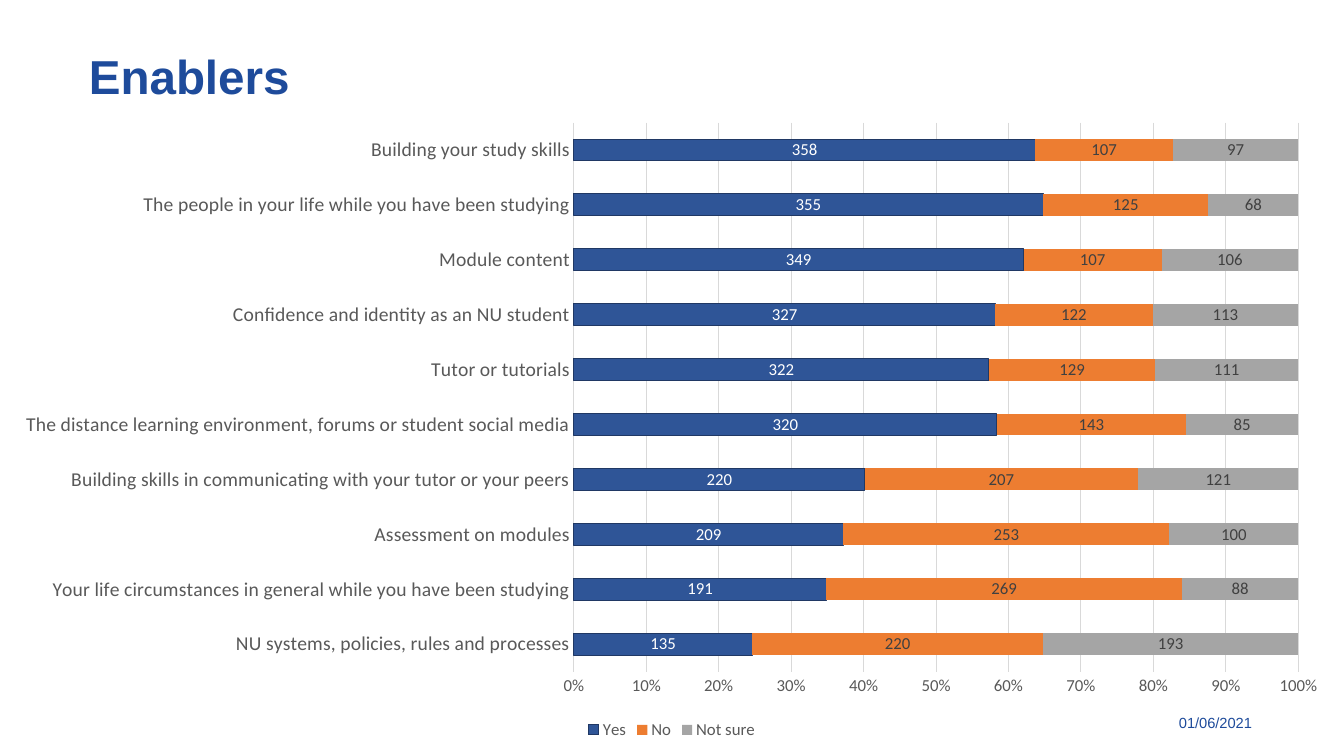
import pptx
import pptx.chart.data
import pptx.dml.color
import pptx.enum.chart
import pptx.enum.text
import pptx.oxml
import pptx.util

Pt = pptx.util.Pt
ALIGN = pptx.enum.text.PP_ALIGN

COLORS = {
    "brand": "1E4B9B",
    "yes": "2F5597",
    "edge": "203864",
    "no": "ED7D31",
    "unsure": "A5A5A5",
    "white": "FFFFFF",
    "dark": "404040",
    "grey": "595959",
    "grid": "D9D9D9",
}

# Each row: enabler, yes, no, not sure; the first row is the lowest bar
ROWS = [
    ("NU systems, policies, rules and processes", 135, 220, 193),
    ("Your life circumstances in general while you have been studying", 191, 269, 88),
    ("Assessment on modules", 209, 253, 100),
    ("Building skills in communicating with your tutor or your peers", 220, 207, 121),
    ("The distance learning environment, forums or student social media", 320, 143, 85),
    ("Tutor or tutorials", 322, 129, 111),
    ("Confidence and identity as an NU student", 327, 122, 113),
    ("Module content", 349, 107, 106),
    ("The people in your life while you have been studying", 355, 125, 68),
    ("Building your study skills", 358, 107, 97),
]

# Each answer: name, fill, label colour
ANSWERS = [
    ("Yes", "yes", "white"),
    ("No", "no", "dark"),
    ("Not sure", "unsure", "dark"),
]


def color(name):
    return pptx.dml.color.RGBColor.from_string(COLORS[name])


def style(font, face, size, name, bold=False):
    font.name = face
    font.size = Pt(size)
    font.bold = bold
    font.color.rgb = color(name)


def add_text(slide, box, text, size, align, bold=False):
    frame = slide.shapes.add_textbox(*map(Pt, box)).text_frame
    frame.word_wrap = True
    para = frame.paragraphs[0]
    para.alignment = align
    run = para.add_run()
    run.text = text
    style(run.font, "Arial", size, "brand", bold)
    return frame


def add_title(slide, text):
    frame = add_text(slide, (60.5, 36.7, 625.7, 69.1), text, 34, ALIGN.LEFT, True)
    frame.margin_left = frame.margin_top = frame.margin_bottom = Pt(3)
    frame.margin_right = Pt(1.5)
    para = frame.paragraphs[0]
    para.line_spacing = 0.85
    para.space_before = Pt(4)


def place_plot(chart, **parts):
    """Fix the inner plot area, in fractions of the chart."""
    space = pptx.oxml.ns.nsdecls("c")
    sizes = "".join(f'<c:{key} val="{val}"/>' for key, val in parts.items())
    layout = pptx.oxml.parse_xml(
        f'<c:layout {space}><c:manualLayout><c:layoutTarget val="inner"/>'
        f'<c:xMode val="edge"/><c:yMode val="edge"/>{sizes}'
        "</c:manualLayout></c:layout>"
    )
    area = chart._chartSpace.chart.plotArea
    for old in area.findall(pptx.oxml.ns.qn("c:layout")):
        area.remove(old)
    area.insert(0, layout)


def style_axes(chart):
    cats, vals = chart.category_axis, chart.value_axis
    for axis, size in ((cats, 14), (vals, 12)):
        axis.major_tick_mark = pptx.enum.chart.XL_TICK_MARK.NONE
        axis.minor_tick_mark = pptx.enum.chart.XL_TICK_MARK.NONE
        style(axis.tick_labels.font, "Calibri", size, "grey")
    cats.has_major_gridlines = False
    vals.has_major_gridlines = True
    for line in (cats.format.line, vals.major_gridlines.format.line):
        line.color.rgb = color("grid")
        line.width = Pt(0.75)
    vals.format.line.fill.background()
    vals.minimum_scale, vals.maximum_scale, vals.major_unit = 0, 1, 0.1
    vals.tick_labels.number_format = "0%"
    vals.tick_labels.number_format_is_linked = False


def style_bars(plot):
    plot.gap_width = 150
    plot.overlap = 100
    plot.vary_by_categories = False
    for bars, (_, fill, ink) in zip(plot.series, ANSWERS):
        bars.format.fill.solid()
        bars.format.fill.fore_color.rgb = color(fill)
        labels = bars.data_labels
        labels.show_value = True
        labels.number_format = "###0"
        labels.number_format_is_linked = False
        style(labels.font, "Calibri", 12, ink)
    edge = plot.series[0].format.line
    edge.color.rgb = color("edge")
    edge.width = Pt(0.75)


def add_bars(slide, box):
    names, *counts = zip(*ROWS)
    data = pptx.chart.data.CategoryChartData(number_format="###0")
    data.categories = names
    for (name, _, _), vals in zip(ANSWERS, counts):
        data.add_series(name, vals)
    kind = pptx.enum.chart.XL_CHART_TYPE.BAR_STACKED_100
    chart = slide.shapes.add_chart(kind, *map(Pt, box), data).chart
    chart.has_title = False
    chart.font.name = "Calibri"
    chart.font.size = Pt(10)
    chart.has_legend = True
    chart.legend.position = pptx.enum.chart.XL_LEGEND_POSITION.BOTTOM
    chart.legend.include_in_layout = False
    style(chart.legend.font, "Calibri", 12, "grey")
    style_axes(chart)
    style_bars(chart.plots[0])
    place_plot(chart, x=0.427, y=0.02, w=0.539, h=0.866)


def main():
    deck = pptx.Presentation()
    deck.slide_width, deck.slide_height = Pt(960), Pt(540)
    slide = deck.slides.add_slide(deck.slide_layouts[6])
    add_text(slide, (797, 506.2, 104.4, 20.2), "01/06/2021", 10.5, ALIGN.RIGHT)
    add_title(slide, "Enablers")
    add_bars(slide, (0, 78.5, 960, 452.9))
    deck.save("out.pptx")


if __name__ == "__main__":
    main()
